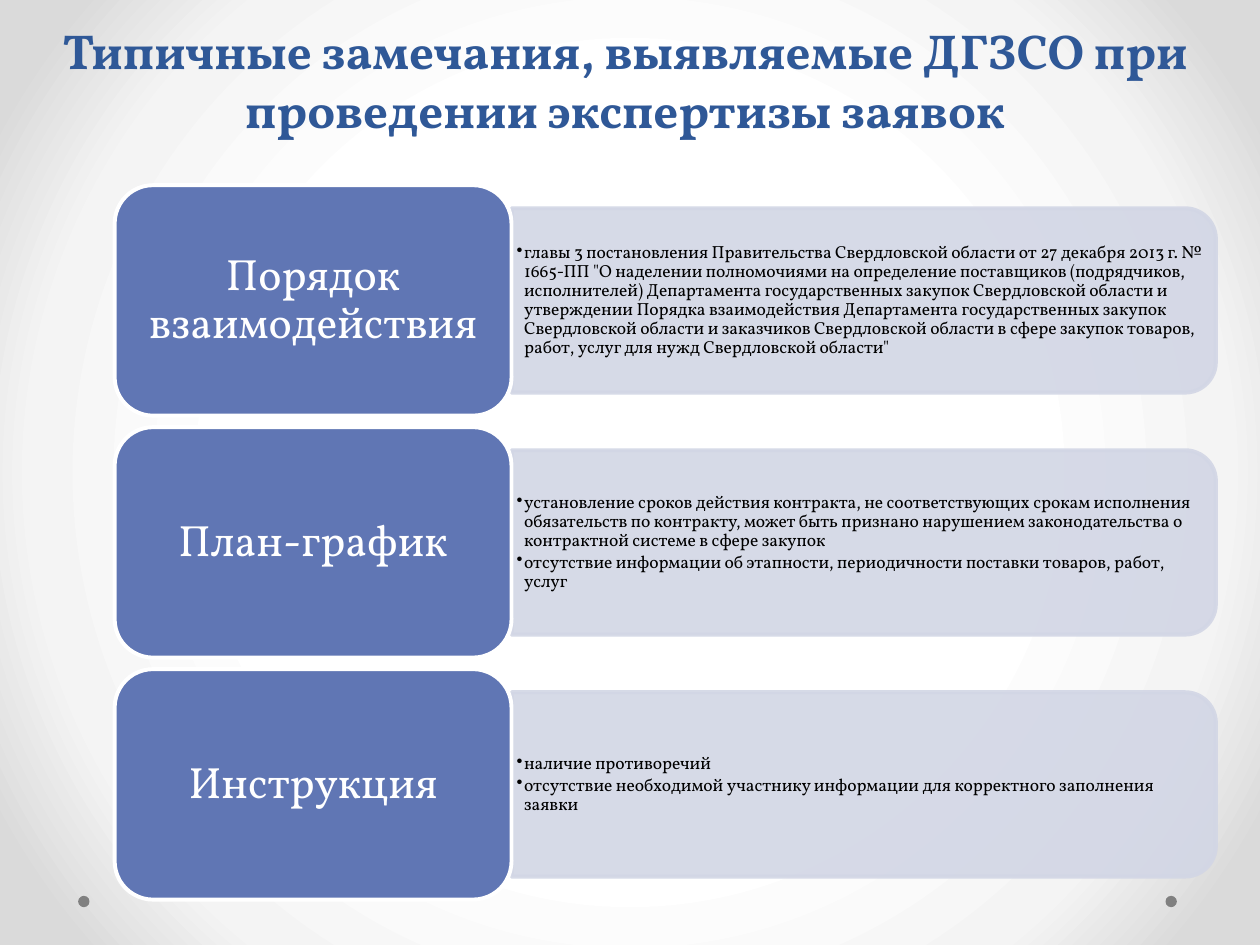
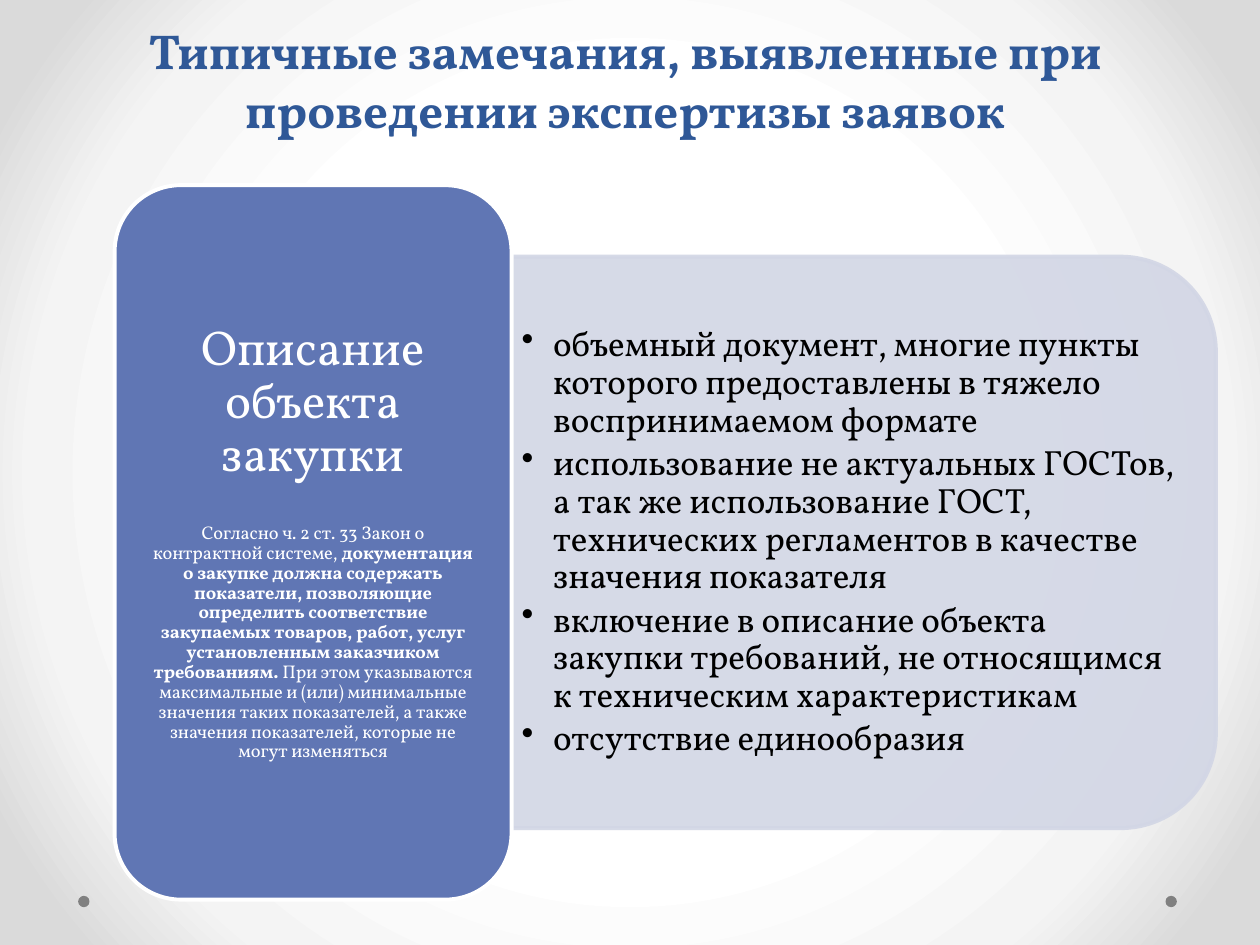
"""Build two slides of typical remarks made when procurement applications are reviewed."""
from lxml.etree import SubElement
from pptx import Presentation
from pptx.dml.color import RGBColor
from pptx.enum.shapes import MSO_SHAPE
from pptx.enum.text import MSO_ANCHOR, MSO_AUTO_SIZE, PP_ALIGN
from pptx.oxml.ns import qn
from pptx.util import Inches, Pt

COLOURS = {
    "title": "2F5897",
    "label": "6076B4",
    "panel": "D2D6E5",
    "dot": "808080",
    "white": "FFFFFF",
    "black": "000000",
}
BACKDROP = [(50, "FFFFFF"), (76, "F4F4F4"), (92, "DADADA")]
FONT = "Vollkorn"
ROWS_TOP, ROWS_HEIGHT = 1.47, 5.67
LABEL_LEFT, LABEL_WIDTH = 0.91, 3.15
PANEL_LEFT, PANEL_WIDTH = 4.06, 5.59
GAP_SHARE, PANEL_SHARE, CORNER_SHARE = 0.05, 0.8, 0.05

REMARKS = [
    (["Порядок взаимодействия"], [
        "главы 3 постановления Правительства Свердловской области от 27 декабря 2013 г. "
        "№ 1665-ПП \"О наделении полномочиями на определение поставщиков (подрядчиков, "
        "исполнителей) Департамента государственных закупок Свердловской области и "
        "утверждении Порядка взаимодействия Департамента государственных закупок "
        "Свердловской области и заказчиков Свердловской области в сфере закупок товаров, "
        "работ, услуг для нужд Свердловской области\""]),
    (["План-график"], [
        "установление сроков действия контракта, не соответствующих срокам исполнения "
        "обязательств по контракту, может быть признано нарушением законодательства о "
        "контрактной системе в сфере закупок",
        "отсутствие информации об этапности, периодичности поставки товаров, работ, услуг"]),
    (["Инструкция"], [
        "наличие противоречий",
        "отсутствие необходимой участнику информации для корректного заполнения заявки"]),
]
LAW_NOTE = [
    ("Согласно ч. 2 ст. 33 Закон о контрактной системе, ", False),
    ("документация о закупке должна содержать показатели, позволяющие определить "
     "соответствие закупаемых товаров, работ, услуг установленным заказчиком требованиям.",
     True),
    (" При этом указываются максимальные и (или) минимальные значения таких показателей, "
     "а также значения показателей, которые не могут изменяться", False),
]
OBJECT_REMARKS = [
    (["Описание объекта закупки", LAW_NOTE], [
        "объемный документ, многие пункты которого предоставлены в тяжело "
        "воспринимаемом формате",
        "использование не актуальных ГОСТов, а так же использование ГОСТ, технических "
        "регламентов в качестве значения показателя",
        "включение в описание объекта закупки требований, не относящимся к техническим "
        "характеристикам",
        "отсутствие единообразия"]),
]


def rgb(name):
    return RGBColor.from_string(COLOURS[name])


def add_text(frame, text, *, size, colour, bold=False, align=PP_ALIGN.LEFT,
             spacing=0.9, after=0, hanging=None):
    """Add a paragraph; text is a string or a list of (string, bold) spans."""
    first = frame.paragraphs[0]
    para = frame.add_paragraph() if first.runs else first
    para.alignment, para.line_spacing, para.space_after = align, spacing, Pt(after)
    para.space_before = Pt(0)
    for words, heavy in [(text, bold)] if isinstance(text, str) else text:
        span = para.add_run()
        span.text = words
        span.font.name, span.font.size, span.font.bold = FONT, Pt(size), heavy
        span.font.color.rgb = rgb(colour)
    if hanging:
        properties = para._p.get_or_add_pPr()
        properties.set("marL", str(Inches(hanging)))
        properties.set("indent", str(-Inches(hanging)))
        SubElement(properties, qn("a:buChar")).set("char", "•")


def prepare_frame(frame, size):
    """Centre the text vertically with margins in step with its size."""
    frame.word_wrap = True
    frame.auto_size = MSO_AUTO_SIZE.NONE
    frame.vertical_anchor = MSO_ANCHOR.MIDDLE
    frame.margin_left = frame.margin_right = Inches(0.004 * size)
    frame.margin_top = frame.margin_bottom = Inches(0.002 * size)


def add_box(page, kind, left, top, width, height, fill, line=None):
    box = page.shapes.add_shape(kind, Inches(left), Inches(top), Inches(width), Inches(height))
    box.shadow.inherit = False
    box.fill.solid()
    box.fill.fore_color.rgb = rgb(fill)
    if line:
        box.line.color.rgb = rgb(line)
        box.line.width = Pt(2.25)
    else:
        box.line.fill.background()
    return box


def add_panel(page, middle, height, remarks, size, hanging):
    """Add a panel rounded on its right side, with a bulleted list over it."""
    panel = add_box(page, MSO_SHAPE.ROUND_2_SAME_RECTANGLE,
                    PANEL_LEFT + (PANEL_WIDTH - height) / 2, middle - PANEL_WIDTH / 2,
                    height, PANEL_WIDTH, "panel", "panel")
    panel.rotation = 90
    for colour in panel.element.spPr.iter(qn("a:srgbClr")):
        SubElement(colour, qn("a:alpha")).set("val", "90000")
    corner = CORNER_SHARE * height
    box = page.shapes.add_textbox(
        Inches(PANEL_LEFT), Inches(middle - height / 2 + corner),
        Inches(PANEL_WIDTH - corner), Inches(height - 2 * corner))
    prepare_frame(box.text_frame, size)
    for remark in remarks:
        add_text(box.text_frame, remark, size=size, colour="black",
                 after=0.15 * size, hanging=hanging)


def add_label(page, top, height, texts, size):
    """Add a rounded label with a heading and an optional small note."""
    label = add_box(page, MSO_SHAPE.ROUNDED_RECTANGLE, LABEL_LEFT, top,
                    LABEL_WIDTH, height, "label", "white")
    prepare_frame(label.text_frame, size)
    heading, *notes = texts
    add_text(label.text_frame, heading, size=size, colour="white",
             align=PP_ALIGN.CENTER, after=24 if notes else 0)
    for note in notes:
        add_text(label.text_frame, note, size=10.5, colour="white", align=PP_ALIGN.CENTER)


def add_rows(page, rows, label_size, list_size, hanging):
    """Share the height of the diagram equally among its rows."""
    height = ROWS_HEIGHT / (len(rows) + GAP_SHARE * (len(rows) - 1))
    for index, (label, remarks) in enumerate(rows):
        top = ROWS_TOP + index * height * (1 + GAP_SHARE)
        add_panel(page, top + height / 2, PANEL_SHARE * height, remarks, list_size, hanging)
        add_label(page, top, height, label, label_size)


def add_page(deck, title):
    """Add a page with the two corner dots and the shared title style."""
    page = deck.slides.add_slide(deck.slide_layouts.get_by_name("Title Only"))
    for left in (9.25, 0.62):
        add_box(page, MSO_SHAPE.OVAL, left, 7.11, 0.09, 0.09, "dot")
    box = page.shapes.title
    box.left, box.top, box.width, box.height = map(Inches, (0.04, 0.21, 9.84, 0.94))
    box.text_frame.auto_size = MSO_AUTO_SIZE.NONE
    box.text_frame.vertical_anchor = MSO_ANCHOR.BOTTOM
    add_text(box.text_frame, title, size=28, colour="title", bold=True,
             align=PP_ALIGN.CENTER, spacing=1.0)
    return page


def paint_backdrop(master):
    """Give the master a round gradient that darkens towards the edges."""
    master.background.fill.gradient()
    gradient = master.element.find(".//" + qn("p:bgPr")).find(qn("a:gradFill"))
    for child in list(gradient):
        gradient.remove(child)
    stops = SubElement(gradient, qn("a:gsLst"))
    for position, colour in BACKDROP:
        stop = SubElement(stops, qn("a:gs"), pos=str(position * 1000))
        SubElement(stop, qn("a:srgbClr"), val=colour)
    circle = SubElement(gradient, qn("a:path"), path="circle")
    SubElement(circle, qn("a:fillToRect"), dict.fromkeys("ltrb", "50000"))


def main():
    deck = Presentation()
    deck.slide_width, deck.slide_height = Inches(10), Inches(7.5)
    paint_backdrop(deck.slide_master)
    page = add_page(deck, "Типичные замечания, выявляемые ДГЗСО при проведении экспертизы заявок")
    add_rows(page, REMARKS, label_size=25, list_size=10, hanging=0.06)
    page = add_page(deck, "Типичные замечания, выявленные при проведении экспертизы заявок")
    add_rows(page, OBJECT_REMARKS, label_size=28, list_size=20, hanging=0.25)
    deck.save("out.pptx")


if __name__ == "__main__":
    main()
